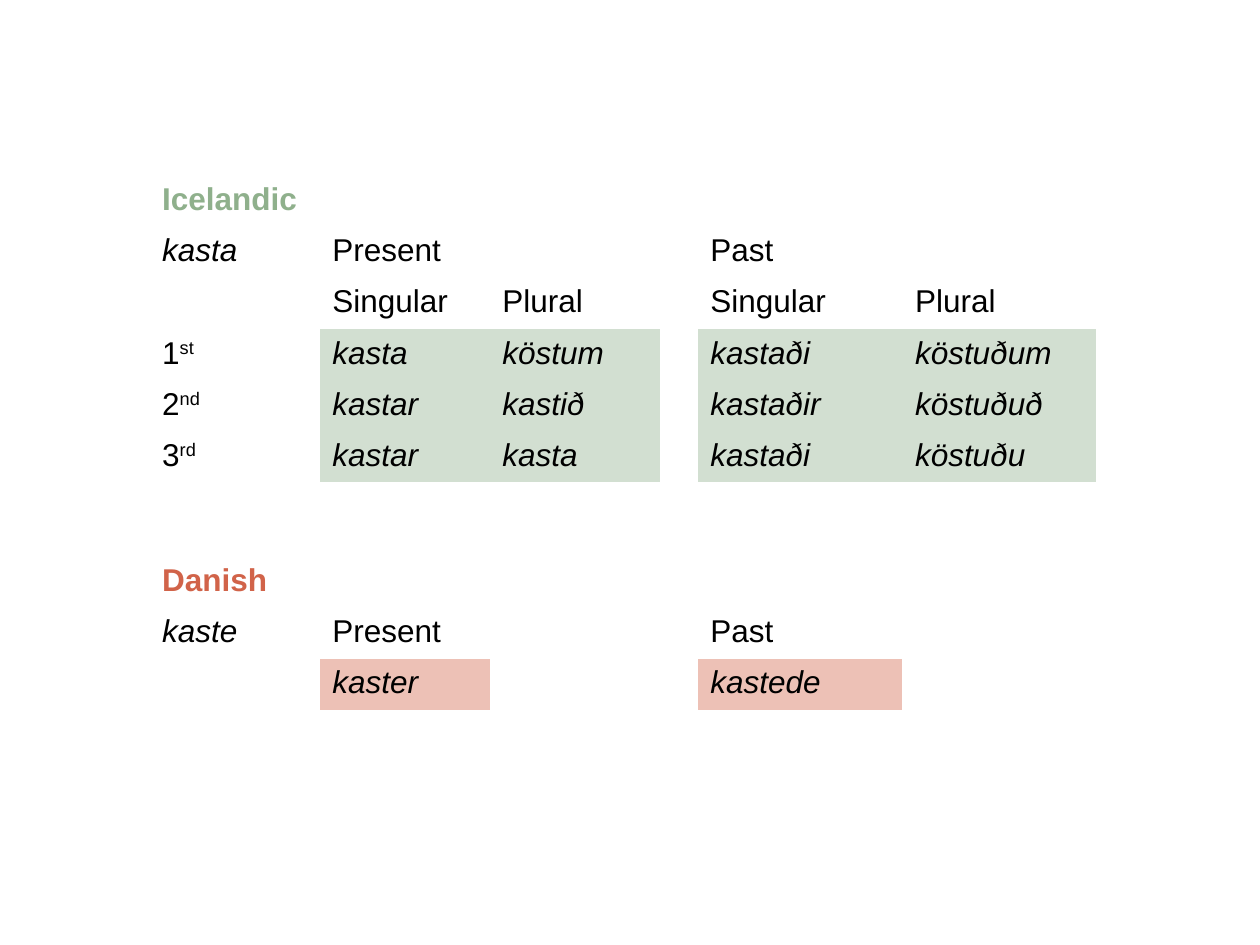
"""Build a slide that compares Icelandic and Danish verb forms."""
from dataclasses import dataclass

from pptx import Presentation as Deck
from pptx.dml.color import RGBColor as Color
from pptx.oxml.ns import qn
from pptx.util import Pt


@dataclass(frozen=True)
class Theme:
    font: str = "Arial"
    size: float = 18
    ink: str = "000000"
    green: str = "8FB08C"
    mint: str = "D2DFD1"
    red: str = "D16349"
    pink: str = "EDC1B6"
    plain: str = "{2D5ABB26-0587-4C30-8999-92F81FD0307C}"


class Page:
    def __init__(self, slide, theme):
        self.slide = slide
        self.theme = theme

    def style(self, run, ink, bold=False, slant=False):
        font = run.font
        font.name = self.theme.font
        font.size = Pt(self.theme.size)
        font.bold = bold
        font.italic = slant
        font.color.rgb = Color.from_string(ink)

    def cell(self, cell, text, ink, bold=False, slant=False, fill=None):
        base, _, mark = text.partition("^")
        para = cell.text_frame.paragraphs[0]
        para.text = base
        para.font.size = Pt(self.theme.size)
        if mark:
            para.add_run().text = mark
        for run in para.runs:
            self.style(run, ink, bold, slant)
        if mark:
            para.runs[-1].font._element.set("baseline", "30000")
        if fill:
            cell.fill.solid()
            cell.fill.fore_color.rgb = Color.from_string(fill)
        else:
            cell.fill.background()

    def table(self, top, rows, forms, head, tint):
        """Draw a verb table whose forms start at row number forms."""
        frame = self.slide.shapes.add_table(
            len(rows), len(COLS), Pt(LEFT), Pt(top),
            Pt(sum(COLS)), Pt(ROW * len(rows)))
        table = frame.table
        table.first_row = table.horz_banding = False
        table._tbl.tblPr.find(qn("a:tableStyleId")).text = self.theme.plain
        for col, width in zip(table.columns, COLS):
            col.width = Pt(width)
        for r, row in enumerate(rows):
            table.rows[r].height = Pt(ROW)
            for c, text in enumerate(row):
                title = r == 0
                form = r >= forms and c > 0 and text != ""
                verb = (r, c) == (1, 0)
                self.cell(table.cell(r, c), text,
                          head if title else self.theme.ink, title,
                          form or verb, tint if form else None)


LEFT, ROW = 85.5, 29.2
COLS = [97.2, 97.2, 97.2, 21.6, 117, 110.9]
NORSE = [
    ["Icelandic", "", "", "", "", ""],
    ["kasta", "Present", "", "", "Past", ""],
    ["", "Singular", "Plural", "", "Singular", "Plural"],
    ["1^st", "kasta", "köstum", "", "kastaði", "köstuðum"],
    ["2^nd", "kastar", "kastið", "", "kastaðir", "köstuðuð"],
    ["3^rd", "kastar", "kasta", "", "kastaði", "köstuðu"],
]
DANISH = [
    ["Danish", "", "", "", "", ""],
    ["kaste", "Present", "", "", "Past", ""],
    ["", "kaster", "", "", "kastede", ""],
]


def main():
    deck = Deck()
    deck.slide_width, deck.slide_height = Pt(720), Pt(540)
    theme = Theme()
    page = Page(deck.slides.add_slide(deck.slide_layouts[6]), theme)
    page.table(100.5, NORSE, 3, theme.green, theme.mint)
    page.table(318.2, DANISH, 2, theme.red, theme.pink)
    deck.save("out.pptx")


if __name__ == "__main__":
    main()
